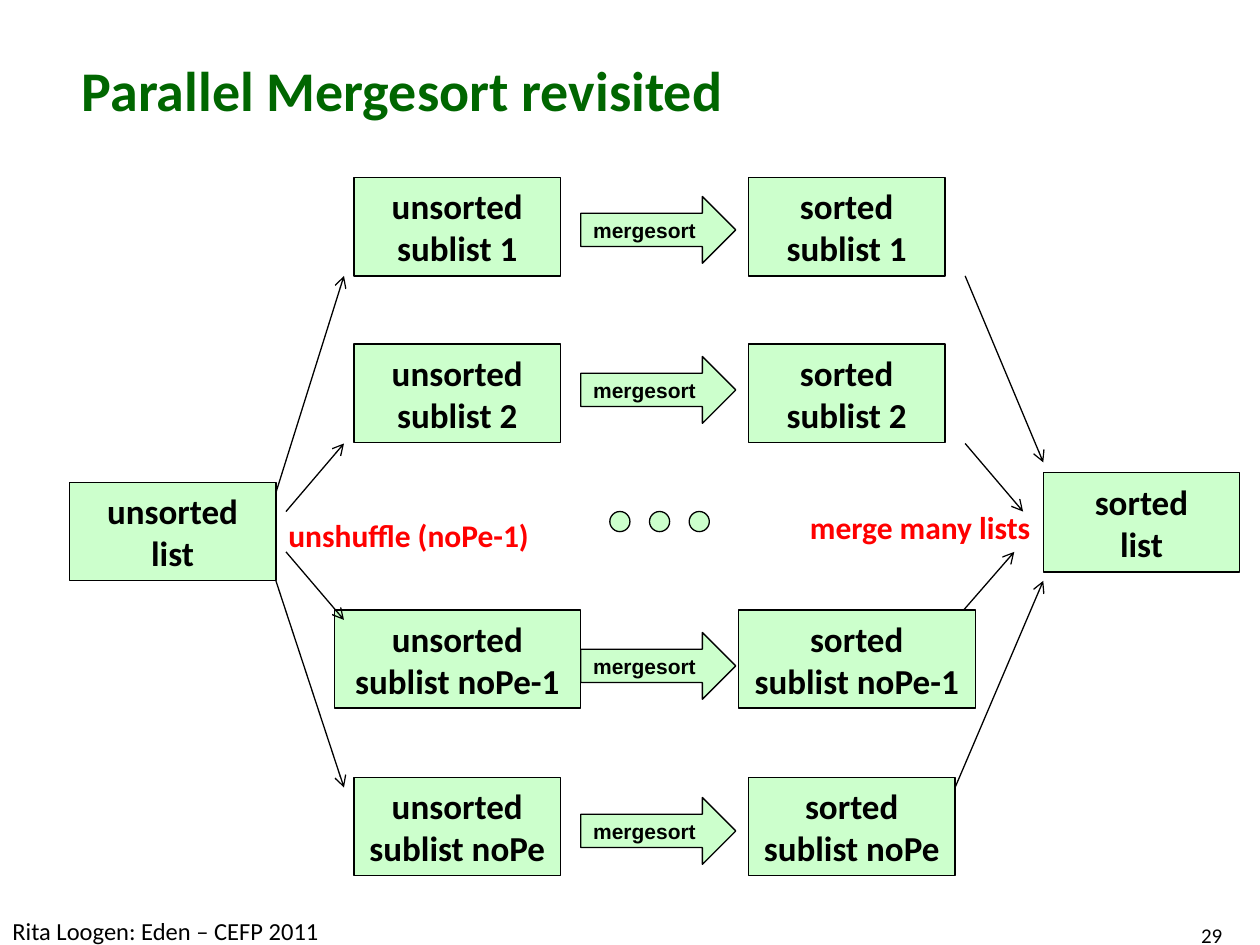
"""Build the slide that shows parallel mergesort as split, sort and merge steps."""
from lxml import etree
from pptx import Presentation
from pptx.dml.color import RGBColor
from pptx.enum import shapes, text
from pptx.oxml.ns import qn
from pptx.util import Inches, Pt

TITLE = "Parallel Mergesort revisited"
GREEN, DARK_GREEN, RED, BLACK = "CCFFCC", "006600", "FF0000", "000000"
LEFT, CENTER, RIGHT = text.PP_ALIGN.LEFT, text.PP_ALIGN.CENTER, text.PP_ALIGN.RIGHT
BOX_HEIGHT = 0.78
UNSORTED_CENTER, ARROW_LEFT = 3.63, 4.61

# name, top, unsorted width, sorted left, sorted width, arrow top
SUBLISTS = [
    ("sublist 1", 1.41, 1.64, 5.94, 1.56, 1.56),
    ("sublist 2", 2.73, 1.64, 5.94, 1.56, 2.83),
    ("sublist noPe-1", 4.84, 1.95, 5.86, 1.88, 5.02),
    ("sublist noPe", 6.17, 1.64, 5.94, 1.64, 6.33),
]
LISTS = [("unsorted", 0.55, 3.83, 1.64, BOX_HEIGHT), ("sorted", 8.28, 3.75, 1.56, 0.79)]
MERGE_LINES = [
    (7.66, 2.19, 8.28, 3.67),
    (7.66, 3.52, 8.12, 4.06),
    (7.58, 4.92, 8.05, 4.38),
    (7.58, 6.25, 8.28, 4.61),
]
SPLIT_LINES = [
    (2.19, 3.91, 2.73, 2.19),
    (2.27, 4.06, 2.73, 3.52),
    (2.27, 4.38, 2.73, 4.92),
    (2.19, 4.61, 2.73, 6.25),
]
# words, left, top, width, height, size, colour, bold, alignment
LABELS = [
    ("unshuffle (noPe-1)", 2.19, 4.05, 2.19, 0.4, 18, RED, True, LEFT),
    ("merge many lists", 6.33, 3.98, 1.95, 0.4, 18, RED, True, LEFT),
    ("Rita Loogen: Eden – CEFP 2011", 0, 7.22, 5.83, 0.28, 14, BLACK, False, LEFT),
    ("29", 7.47, 7.27, 2.33, 0.22, 12, BLACK, False, RIGHT),
]


def colour(value):
    return RGBColor.from_string(value)


def write(shape, lines, size, value=BLACK, bold=True, align=LEFT, font="Calibri"):
    frame = shape.text_frame
    frame.word_wrap = True
    frame.text = "\n".join(lines)
    for paragraph in frame.paragraphs:
        paragraph.alignment = align
        paragraph.font.name = font
        paragraph.font.size = Pt(size)
        paragraph.font.bold = bold
        paragraph.font.color.rgb = colour(value)


def add_figure(slide, kind, *place):
    shape = slide.shapes.add_shape(kind, *map(Inches, place))
    shape.shadow.inherit = False
    shape.fill.solid()
    shape.fill.fore_color.rgb = colour(GREEN)
    shape.line.color.rgb = colour(BLACK)
    shape.line.width = Pt(0.75)
    return shape


def add_box(slide, lines, *place):
    box = add_figure(slide, shapes.MSO_SHAPE.RECTANGLE, *place)
    write(box, lines, 20, align=CENTER)


def add_line(slide, *ends):
    line = slide.shapes.add_connector(shapes.MSO_CONNECTOR.STRAIGHT, *map(Inches, ends))
    line.line.color.rgb = colour(BLACK)
    line.line.width = Pt(0.75)
    properties = line._element.spPr
    etree.SubElement(properties.find(qn("a:ln")), qn("a:tailEnd"), type="arrow")
    etree.SubElement(properties, qn("a:effectLst"))


def main():
    presentation = Presentation()
    presentation.slide_width, presentation.slide_height = Inches(10), Inches(7.5)
    slide = presentation.slides.add_slide(presentation.slide_layouts[5])

    title = slide.shapes.title
    title.left, title.top, title.width, title.height = map(Inches, (0.55, 0.08, 9.25, 1.25))
    title.text_frame.vertical_anchor = text.MSO_ANCHOR.MIDDLE
    write(title, [TITLE], 32, DARK_GREEN)

    for ends in MERGE_LINES:
        add_line(slide, *ends)
    for state, *place in LISTS:
        add_box(slide, [state, "list"], *place)
    for name, top, width, sorted_left, sorted_width, arrow_top in SUBLISTS:
        unsorted_left = UNSORTED_CENTER - width / 2
        add_box(slide, ["unsorted", name], unsorted_left, top, width, BOX_HEIGHT)
        add_box(slide, ["sorted", name], sorted_left, top, sorted_width, BOX_HEIGHT)
        arrow = add_figure(slide, shapes.MSO_SHAPE.RIGHT_ARROW, ARROW_LEFT, arrow_top, 1.23, 0.53)
        write(arrow, ["mergesort"], 12, font="Arial")
    for ends in SPLIT_LINES:
        add_line(slide, *ends)
    for index in range(3):
        add_figure(slide, shapes.MSO_SHAPE.OVAL, 4.84 + 0.315 * index, 4.06, 0.16, 0.16)

    for words, left, top, width, height, size, value, bold, align in LABELS:
        label = slide.shapes.add_textbox(*map(Inches, (left, top, width, height)))
        write(label, [words], size, value, bold, align)

    presentation.save("out.pptx")


if __name__ == "__main__":
    main()
